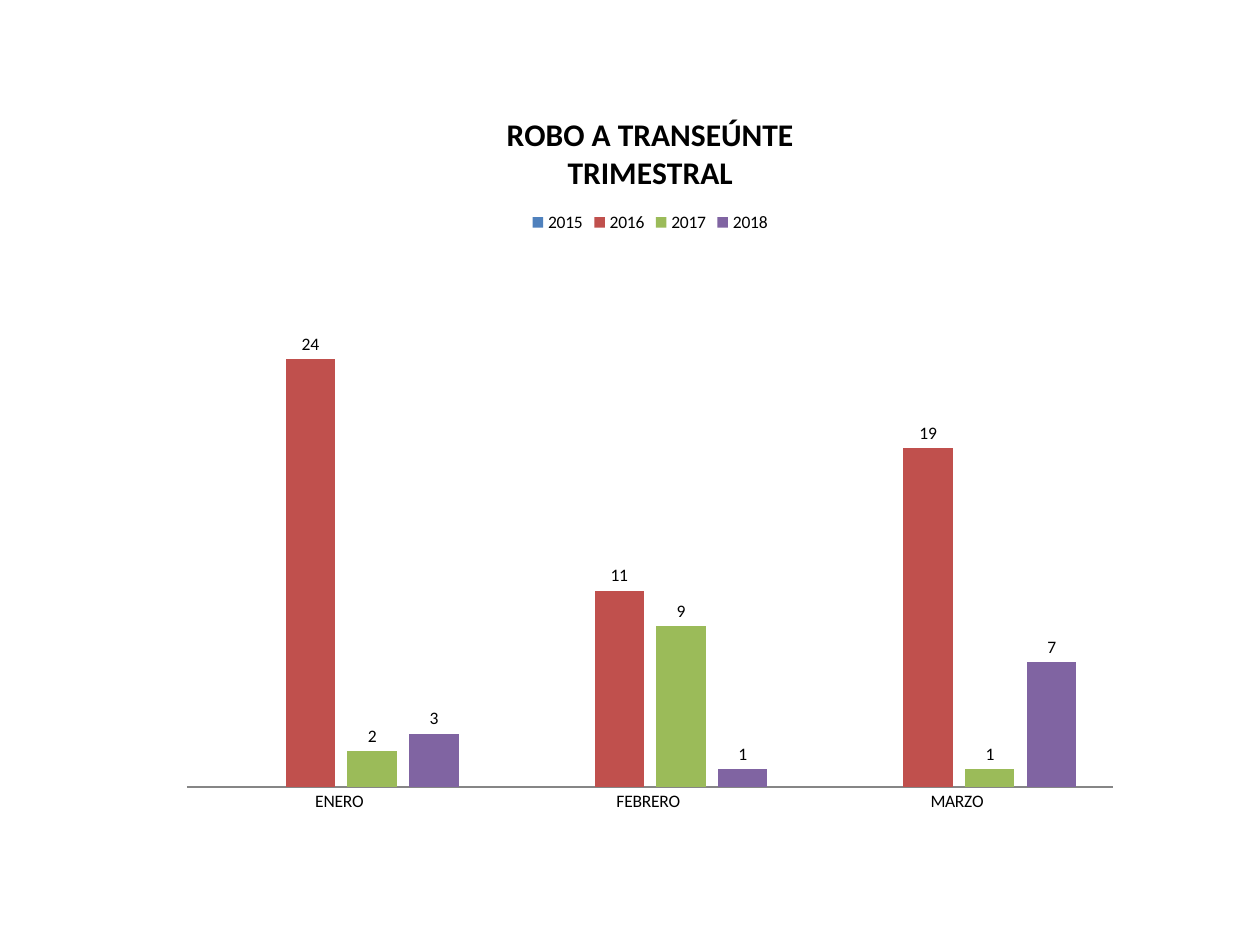
from pptx import Presentation
from pptx.chart.data import CategoryChartData
from pptx.dml.color import RGBColor
from pptx.enum.chart import (XL_CHART_TYPE, XL_LABEL_POSITION,
                             XL_LEGEND_POSITION, XL_TICK_MARK)
from pptx.util import Pt

FONT = "Calibri"
BLACK = RGBColor(0x00, 0x00, 0x00)
AXIS_GRAY = RGBColor(0x86, 0x86, 0x86)
BLUE = RGBColor(0x4F, 0x81, 0xBD)
RED = RGBColor(0xC0, 0x50, 0x4D)
GREEN = RGBColor(0x9B, 0xBB, 0x59)
PURPLE = RGBColor(0x80, 0x64, 0xA2)

MONTHS = ["ENERO ", "FEBRERO ", "MARZO "]
TITLE_LINES = ["ROBO A TRANSEÚNTE", "TRIMESTRAL"]
YEARS = [
    ("2015", (None, None, None), BLUE),
    ("2016", (24, 11, 19), RED),
    ("2017", (2, 9, 1), GREEN),
    ("2018", (3, 1, 7), PURPLE),
]


def style_font(font, size, bold=False):
    font.name = FONT
    font.size = Pt(size)
    font.bold = bold
    font.color.rgb = BLACK


def add_robbery_chart(slide):
    data = CategoryChartData()
    data.categories = MONTHS
    for year, values, _ in YEARS:
        data.add_series(year, values)
    frame = slide.shapes.add_chart(
        XL_CHART_TYPE.COLUMN_CLUSTERED,
        Pt(95.76), Pt(50.4), Pt(551.52), Pt(421.92), data)
    style_font(frame.chart.font, 10)
    return frame.chart


def style_title(chart):
    text_frame = chart.chart_title.text_frame
    text_frame.text = "\n".join(TITLE_LINES)
    for paragraph in text_frame.paragraphs:
        style_font(paragraph.font, 18, bold=True)
    chart.chart_title.include_in_layout = False


def style_legend(chart):
    chart.has_legend = True
    chart.legend.position = XL_LEGEND_POSITION.TOP
    chart.legend.include_in_layout = False


def style_axes(chart):
    months = chart.category_axis
    months.major_tick_mark = XL_TICK_MARK.NONE
    months.format.line.color.rgb = AXIS_GRAY
    months.format.line.width = Pt(0.75)

    counts = chart.value_axis
    counts.minimum_scale = 0
    counts.maximum_scale = 30
    counts.has_major_gridlines = False
    counts.visible = False


def style_columns(chart):
    plot = chart.plots[0]
    plot.vary_by_categories = False
    plot.gap_width = 150
    plot.overlap = -25
    for series, (_, _, color) in zip(plot.series, YEARS):
        series.format.fill.solid()
        series.format.fill.fore_color.rgb = color
        series.invert_if_negative = False
        series.data_labels.show_value = True
        series.data_labels.position = XL_LABEL_POSITION.OUTSIDE_END


def main():
    presentation = Presentation()
    presentation.slide_width = Pt(720)
    presentation.slide_height = Pt(540)
    slide = presentation.slides.add_slide(presentation.slide_layouts[6])

    # Quarterly column chart, one colour per year
    chart = add_robbery_chart(slide)
    style_title(chart)
    style_legend(chart)
    style_axes(chart)
    style_columns(chart)

    presentation.save("out.pptx")


if __name__ == "__main__":
    main()
